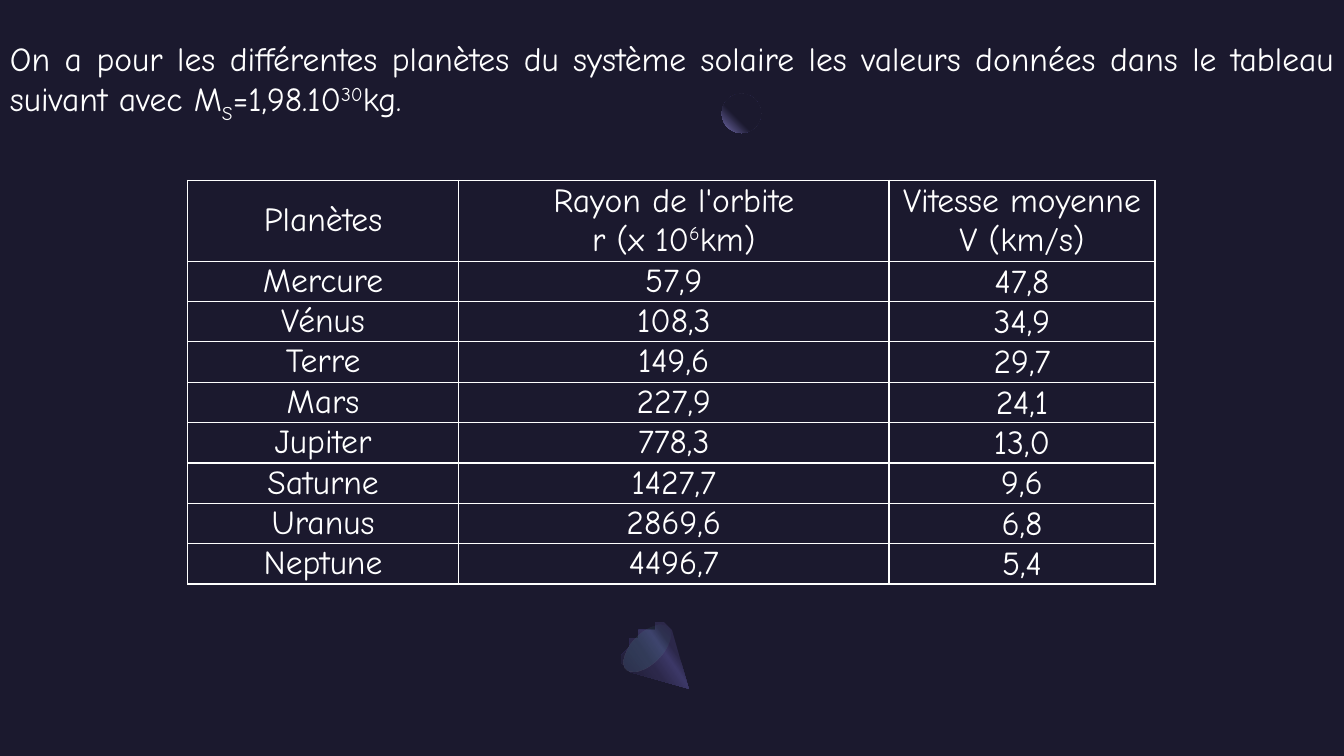
import math

from lxml import etree
from pptx import Presentation
from pptx import util as u
from pptx.dml.color import RGBColor
from pptx.enum import shapes, text
from pptx.oxml import ns

MIDDLE, BOTTOM = text.MSO_ANCHOR.MIDDLE, text.MSO_ANCHOR.BOTTOM
CENTER, JUSTIFY = text.PP_ALIGN.CENTER, text.PP_ALIGN.JUSTIFY


def color(value):
    return RGBColor.from_string(value)


def write(frame, paragraphs, font="Comic Neue", size=24, ink="FFFFFF", align=CENTER):
    for index, runs in enumerate(paragraphs):
        paragraph = frame.add_paragraph() if index else frame.paragraphs[0]
        paragraph.alignment = align
        for words, baseline in runs:
            run = paragraph.add_run()
            run.text = words
            run.font.name = font
            run.font.size = u.Pt(size)
            run.font.color.rgb = color(ink)
            if baseline:
                run.font._element.set("baseline", str(baseline * 1000))


def plain(words):
    return [[(words, 0)]]


class SlideBuilder:
    background = "1B192E"
    border = "FFFFFF"
    columns, rows = 160, 90
    unit = u.Inches(1 / 12)

    def __init__(self, presentation):
        presentation.slide_width = self.columns * self.unit
        presentation.slide_height = self.rows * self.unit
        self.slide = presentation.slides.add_slide(presentation.slide_layouts[6])
        fill = self.slide.background.fill
        fill.solid()
        fill.fore_color.rgb = color(self.background)

    def place(self, *lengths):
        return [round(length * self.unit) for length in lengths]

    def gradient(self, shape, stops, direction):
        shape.shadow.inherit = False
        shape.line.fill.background()
        shape.fill.background()
        marks = "".join(
            f'<a:gs pos="{position * 1000}"><a:srgbClr val="{value}">'
            f'<a:alpha val="{alpha * 1000}"/></a:srgbClr></a:gs>'
            for position, value, alpha in stops
        )
        properties = shape._element.spPr
        properties.replace(
            properties.find(ns.qn("a:noFill")),
            etree.fromstring(
                f'<a:gradFill {ns.nsdecls("a")} rotWithShape="1">'
                f"<a:gsLst>{marks}</a:gsLst>{direction}</a:gradFill>"
            ),
        )

    def linear(self, degrees):
        return f'<a:lin ang="{degrees * 60000}" scaled="0"/>'

    def sphere(self, left, top, size):
        shape = self.slide.shapes.add_shape(
            shapes.MSO_SHAPE.OVAL, *self.place(left, top, size, size)
        )
        self.gradient(
            shape,
            [(60, "1B192E", 100), (100, "7771B2", 100)],
            '<a:path path="circle"><a:fillToRect l="100000" b="100000"/></a:path>',
        )

    def cone(self, center_x, center_y, width, height, tip):
        group = self.slide.shapes.add_group_shape()
        rim = []
        for degrees in range(-15, 196, 5):
            angle = math.radians(degrees)
            along = height / 2 * math.cos(angle) * math.sqrt(0.5)
            across = width / 2 * math.sin(angle) * math.sqrt(0.5)
            rim.append((center_x + along - across, center_y - along - across))
        builder = group.shapes.build_freeform(*tip, scale=self.unit)
        builder.add_line_segments(rim, close=True)
        self.gradient(
            builder.convert_to_shape(),
            [(30, "2C284A", 100), (40, "3C3867", 100), (60, "2C284A", 100), (100, "1B192E", 100)],
            self.linear(145),
        )
        base = group.shapes.add_shape(
            shapes.MSO_SHAPE.OVAL,
            *self.place(center_x - width / 2, center_y - height / 2, width, height),
        )
        base.rotation = 225
        self.gradient(base, [(0, "454075", 33), (100, "5BEFC1", 0)], self.linear(90))

    def textbox(self, left, top, width, height, paragraphs, **style):
        frame = self.slide.shapes.add_textbox(
            *self.place(left, top, width, height)
        ).text_frame
        frame.word_wrap = True
        frame.vertical_anchor = MIDDLE
        frame.auto_size = text.MSO_AUTO_SIZE.SHAPE_TO_FIT_TEXT
        write(frame, paragraphs, **style)

    def cell(self, cell, paragraphs, anchor):
        cell.margin_left = cell.margin_right = cell.margin_top = cell.margin_bottom = 0
        cell.vertical_anchor = anchor
        properties = cell._tc.get_or_add_tcPr()
        for side in "LRTB":
            properties.append(
                etree.fromstring(
                    f'<a:ln{side} {ns.nsdecls("a")} w="12700"><a:solidFill>'
                    f'<a:srgbClr val="{self.border}"/></a:solidFill></a:ln{side}>'
                )
            )
        cell.fill.background()
        write(cell.text_frame, paragraphs)

    def table(self, left, top, widths, row_height, header, records):
        heights = [2 * row_height] + [row_height] * len(records)
        table = self.slide.shapes.add_table(
            len(heights), len(widths), *self.place(left, top, sum(widths), sum(heights))
        ).table
        table.first_row = table.horz_banding = False
        for column, width in zip(table.columns, self.place(*widths)):
            column.width = width
        for row, height in zip(table.rows, self.place(*heights)):
            row.height = height
        for column, paragraphs in enumerate(header):
            self.cell(table.cell(0, column), paragraphs, MIDDLE)
        for row, record in enumerate(records, 1):
            for column, (words, anchor) in enumerate(zip(record, (MIDDLE, MIDDLE, BOTTOM))):
                self.cell(table.cell(row, column), plain(words), anchor)


INTRODUCTION = [[
    ("On a pour les différentes planètes du système solaire les valeurs données "
     "dans le tableau suivant avec M", 0),
    ("S", -25), ("=1,98.10", 0), ("30", 30), ("kg.", 0),
]]
HEADER = [
    plain("Planètes"),
    plain("Rayon de l'orbite") + [[("r (x 10", 0), ("6", 30), ("km)", 0)]],
    plain("Vitesse moyenne") + plain("V (km/s)"),
]
PLANETS = [
    ("Mercure", "57,9", "47,8"),
    ("Vénus", "108,3", "34,9"),
    ("Terre", "149,6", "29,7"),
    ("Mars", "227,9", "24,1"),
    ("Jupiter", "778,3", "13,0"),
    ("Saturne", "1427,7", "9,6"),
    ("Uranus", "2869,6", "6,8"),
    ("Neptune", "4496,7", "5,4"),
]


def main():
    presentation = Presentation()
    builder = SlideBuilder(presentation)
    builder.sphere(85.92, 11.16, 4.68)
    builder.cone(77.04, 77.1, 3.6, 7.08, tip=(81.72, 81.72))
    builder.textbox(0, 4.2, 160, 10.92, INTRODUCTION, align=JUSTIFY)
    builder.table(22.32, 21.48, (32.28, 51.24, 31.68), 4.8, HEADER, PLANETS)
    presentation.save("out.pptx")


if __name__ == "__main__":
    main()
